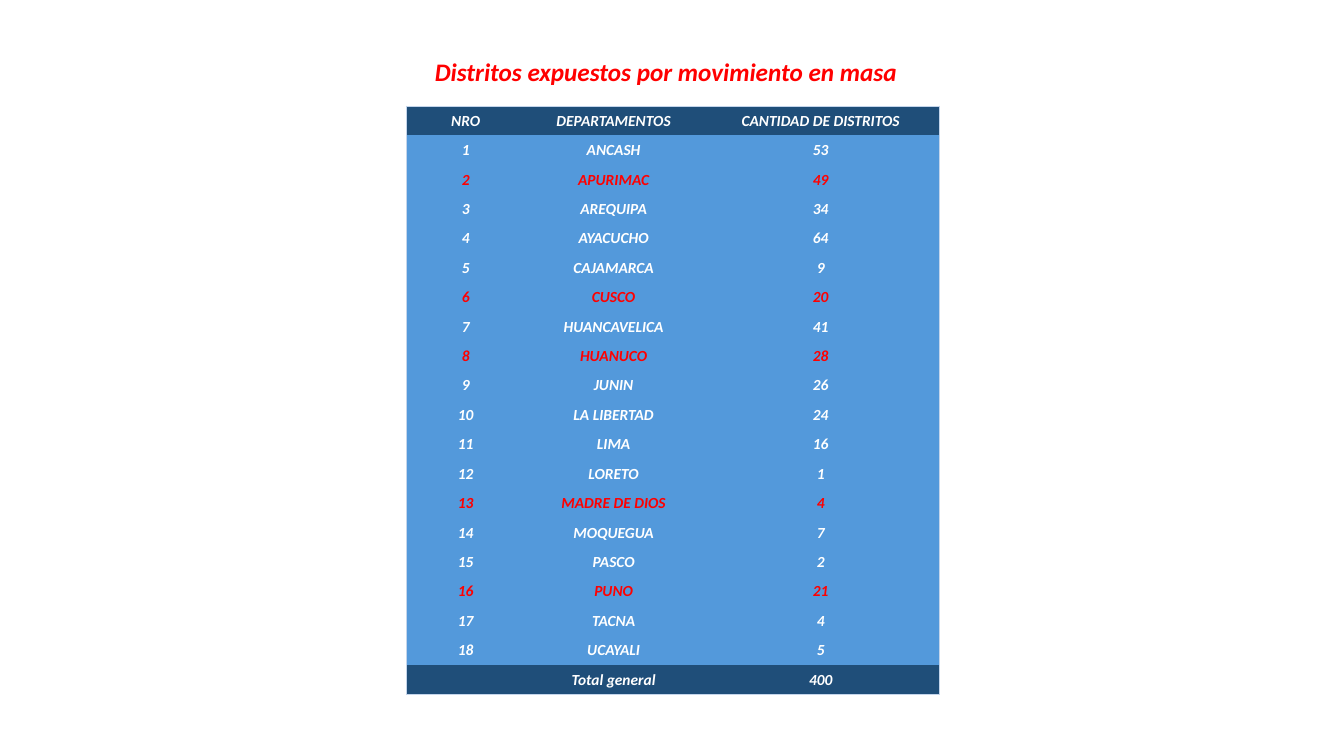
from dataclasses import dataclass

from lxml.etree import SubElement
from pptx import Presentation
from pptx.dml.color import RGBColor
from pptx.enum.text import MSO_ANCHOR, MSO_AUTO_SIZE, PP_ALIGN
from pptx.oxml import parse_xml
from pptx.oxml.ns import nsdecls, qn
from pptx.util import Pt


@dataclass(frozen=True)
class Theme:
    """Colours, font and type sizes of the slide."""
    font: str = "Calibri"
    title_size: float = 18
    cell_size: float = 11
    white: str = "FFFFFF"
    red: str = "FF0000"
    dark: str = "1F4E79"
    blue: str = "5399DB"
    border: str = "C4D5EB"


THEME = Theme()
NO_GRID_STYLE = "{2D5ABB26-0587-4C30-8999-92F81FD0307C}"
TITLE = "Distritos expuestos por movimiento en masa"
HEADER = ("NRO", "DEPARTAMENTOS", "CANTIDAD DE DISTRITOS")
DISTRICTS = {
    "ANCASH": 53, "APURIMAC": 49, "AREQUIPA": 34, "AYACUCHO": 64,
    "CAJAMARCA": 9, "CUSCO": 20, "HUANCAVELICA": 41, "HUANUCO": 28,
    "JUNIN": 26, "LA LIBERTAD": 24, "LIMA": 16, "LORETO": 1,
    "MADRE DE DIOS": 4, "MOQUEGUA": 7, "PASCO": 2, "PUNO": 21,
    "TACNA": 4, "UCAYALI": 5,
}
TOTAL = ("", "Total general", "400")
HIGHLIGHTED = {"APURIMAC", "CUSCO", "HUANUCO", "MADRE DE DIOS", "PUNO"}


def write(tf, text, *, size, color, align=PP_ALIGN.CENTER):
    """Write one bold italic paragraph into a text frame."""
    p = tf.paragraphs[0]
    p.alignment = align
    if not text:
        SubElement(p._p, qn("a:endParaRPr"), sz=str(int(size * 100)))
        return
    r = p.add_run()
    r.text = text
    r.font.name = THEME.font
    r.font.size = Pt(size)
    r.font.bold = r.font.italic = True
    r.font.color.rgb = RGBColor.from_string(color)


def add_borders(cell, sides):
    """Draw thin lines on the given sides of a cell, listed in L, R, T, B order."""
    tc_pr = cell._tc.get_or_add_tcPr()
    for i, side in enumerate(sides):
        tc_pr.insert(i, parse_xml(
            f'<a:ln{side} {nsdecls("a")} w="6350"><a:solidFill>'
            f'<a:srgbClr val="{THEME.border}"/></a:solidFill></a:ln{side}>'))


def add_title(s, left, top, width, height):
    """Place the slide title in its placeholder."""
    sp = s.shapes.title
    sp.left, sp.top, sp.width, sp.height = map(Pt, (left, top, width, height))
    tf = sp.text_frame
    tf.word_wrap = False
    tf.auto_size = MSO_AUTO_SIZE.NONE
    tf.vertical_anchor = MSO_ANCHOR.TOP
    tf.margin_left, tf.margin_right = Pt(0), Pt(9)
    tf.margin_top = tf.margin_bottom = Pt(3.6)
    write(tf, TITLE, size=THEME.title_size, color=THEME.red)


def add_district_table(s, left, top, width, height):
    """Build the table of districts by department with its total."""
    rows = [HEADER]
    rows += [(str(n), name, str(count))
             for n, (name, count) in enumerate(DISTRICTS.items(), 1)]
    rows.append(TOTAL)
    last_row, last_col = len(rows) - 1, len(HEADER) - 1

    table = s.shapes.add_table(len(rows), len(HEADER), Pt(left), Pt(top),
                               Pt(width), Pt(height)).table
    table.first_row = table.horz_banding = False
    table._tbl.tblPr.find(qn("a:tableStyleId")).text = NO_GRID_STYLE
    for col, share in zip(table.columns, (0.223, 0.332, 0.445)):
        col.width = Pt(width * share)
    for i, values in enumerate(rows):
        table.rows[i].height = Pt(height / len(rows))
        fill = THEME.dark if i in (0, last_row) else THEME.blue
        color = THEME.red if values[1] in HIGHLIGHTED else THEME.white
        for j, text in enumerate(values):
            cell = table.cell(i, j)
            cell.margin_left = cell.margin_right = cell.margin_top = Pt(0.7)
            cell.margin_bottom = Pt(0)
            cell.vertical_anchor = MSO_ANCHOR.MIDDLE
            cell.fill.solid()
            cell.fill.fore_color.rgb = RGBColor.from_string(fill)
            write(cell.text_frame, text, size=THEME.cell_size, color=color)
            edges = {"L": j == 0, "R": j == last_col,
                     "T": i == 0, "B": i == last_row}
            add_borders(cell, [side for side, outer in edges.items() if outer])


def main():
    """Build the slide and save it."""
    prs = Presentation()
    prs.slide_width, prs.slide_height = Pt(960), Pt(540)
    s = prs.slides.add_slide(prs.slide_layouts[5])
    add_title(s, 303.8, 36.7, 352.8, 29)
    add_district_table(s, 290.2, 75.6, 380.8, 420.5)
    prs.save("out.pptx")


if __name__ == "__main__":
    main()
